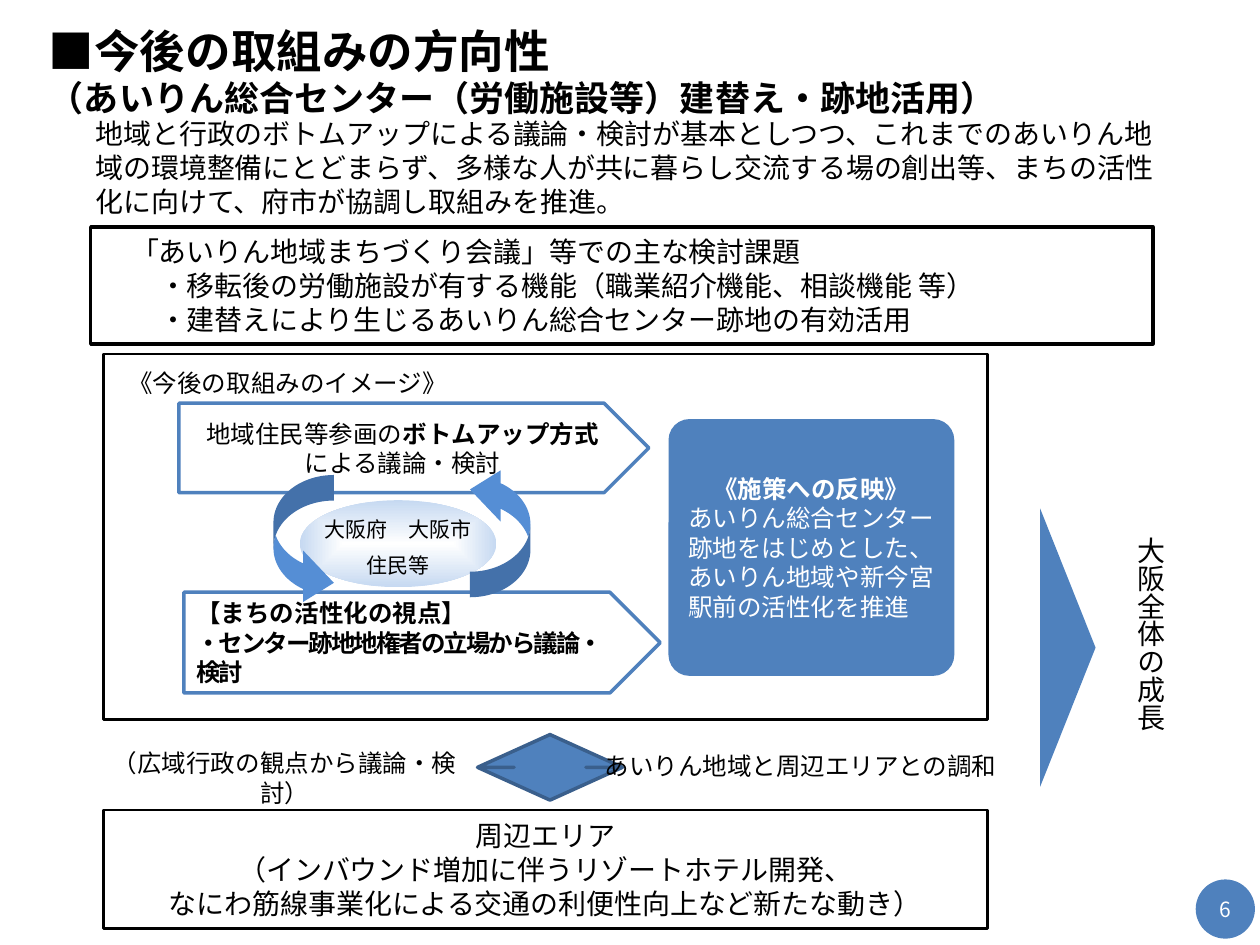
from lxml import etree
from pptx import Presentation
from pptx.dml.color import RGBColor
from pptx.enum.shapes import MSO_SHAPE
from pptx.enum.text import MSO_ANCHOR, PP_ALIGN
from pptx.oxml.ns import qn
from pptx.util import Pt

RECT, PLATE = MSO_SHAPE.RECTANGLE, MSO_SHAPE.PENTAGON
ROUND, OVAL = MSO_SHAPE.ROUNDED_RECTANGLE, MSO_SHAPE.OVAL
WEDGE, CURVE = MSO_SHAPE.ISOSCELES_TRIANGLE, MSO_SHAPE.CURVED_UP_ARROW
TWOWAY = MSO_SHAPE.UP_DOWN_ARROW
LEFT, MID = PP_ALIGN.LEFT, PP_ALIGN.CENTER
TOP, CENTRE = MSO_ANCHOR.TOP, MSO_ANCHOR.MIDDLE

PX = 9144  # 100 px to the inch
FONT = "Noto Sans CJK JP"
HUES = {"black": "000000", "white": "FFFFFF", "blue": "4F81BD",
        "navy": "3A5F8C", "sky": "558ED5", "pale": "C6D9F1"}
RGB = {name: RGBColor.from_string(code) for name, code in HUES.items()}

deck = Presentation()
deck.slide_width, deck.slide_height = 1000 * PX, 750 * PX
slide = deck.slides.add_slide(deck.slide_layouts[6])


def draw(kind, at, fill=None, line=None, width=2, turn=0, adj=()):
    """Add a preset shape, or a text box when kind is None."""
    box = [n * PX for n in at]
    if kind is None:
        return slide.shapes.add_textbox(*box)
    shape = slide.shapes.add_shape(kind, *box)
    shape.shadow.inherit = False
    shape.rotation = turn
    for i, value in enumerate(adj):
        shape.adjustments[i] = value
    if fill:
        shape.fill.solid()
        shape.fill.fore_color.rgb = RGB[fill]
    else:
        shape.fill.background()
    if line:
        shape.line.color.rgb = RGB[line]
        shape.line.width = Pt(width)
    else:
        shape.line.fill.background()
    return shape


def write(shape, size, paras, hue="black", align=LEFT, anchor=TOP, wrap=True):
    """Fill a shape with text; each paragraph is (runs, layout), each run (text, font)."""
    frame = shape.text_frame
    frame.word_wrap, frame.vertical_anchor = wrap, anchor
    for i, (runs, layout) in enumerate(paras):
        para = frame.paragraphs[0] if i == 0 else frame.add_paragraph()
        for key, value in {"alignment": align, **layout}.items():
            setattr(para, key, value)
        for text, font in runs:
            run = para.add_run()
            run.text = text
            style = {"name": FONT, "size": Pt(size), "bold": False, **font}
            for key, value in style.items():
                setattr(run.font, key, value)
            run.font.color.rgb = RGB[hue]
            etree.SubElement(run.font._element, qn("a:ea"), typeface=FONT)
    return frame


BOLD = {"bold": True}

# Heading and lead
tight = {"line_spacing": Pt(23)}
write(draw(None, (29, 25, 945, 75)), 20, [
    ([("■今後の取組みの方向性", {"bold": True, "size": Pt(26)})], tight),
    ([("（あいりん総合センター（労働施設等）建替え・跡地活用）", BOLD)], tight)])
lead = ("地域と行政のボトムアップによる議論・検討が基本としつつ、これまでのあいりん地域の環境整備に"
        "とどまらず、多様な人が共に暮らし交流する場の創出等、まちの活性化に向けて、府市が協調し取組みを推進。")
write(draw(None, (66, 88, 864, 100)), 16, [([(lead, {})], {})])

# Viewpoint and policy
view = draw(PLATE, (146, 470, 378, 80), "white", "blue")
frame = write(view, 14, [
    ([("【まちの活性化の視点】", BOLD)], {}),
    ([("・センター跡地地権者の立場から議論・検討", BOLD)], {})], anchor=CENTRE)
frame.paragraphs[1].runs[0].font._element.set("spc", "-120")

policy = draw(ROUND, (532, 334, 224, 201), "blue", "blue", adj=(0.076,))
write(policy, 14, [
    ([("《施策への反映》", BOLD)], {"alignment": MID}),
    ([("あいりん総合センター跡地をはじめとした、あいりん地域や新今宮駅前の活性化を推進", {})], {})],
    "white", anchor=CENTRE)

# Frame of the scheme, nearby area and labels over the two-way arrow
draw(RECT, (82, 281, 702, 290), None, "black", 1.5)
nearby = ("周辺エリア", "（インバウンド増加に伴うリゾートホテル開発、",
          "なにわ筋線事業化による交通の利便性向上など新たな動き）")
write(draw(RECT, (82, 643, 702, 94), None, "black", 1.5), 16,
      [([(text, {})], {}) for text in nearby], align=MID, anchor=CENTRE)

# This preset lists its head length before its shaft width
draw(TWOWAY, (379, 583, 115, 52), "blue", "navy", adj=(0.32, 0.495))
for at, text in (((464, 591, 343, 37), "あいりん地域と周辺エリアとの調和"),
                 ((62, 589, 328, 37), "（広域行政の観点から議論・検討）")):
    write(draw(None, at), 14, [([(text, {})], {})], align=MID)

# Growth of the whole city
growth = write(draw(None, (889, 416, 42, 188)), 16, [([("大阪全体の成長", {})], {})])
growth._txBody.bodyPr.set("vert", "eaVert")
draw(WEDGE, (737, 492, 221, 44), "blue", turn=90)

# Topics, indented by whole characters
topics = (("「あいりん地域まちづくり会議」等での主な検討課題", 1),
          ("・移転後の労働施設が有する機能（職業紹介機能、相談機能 等）", 2),
          ("・建替えにより生じるあいりん総合センター跡地の有効活用", 2))
frame = write(draw(RECT, (72, 180, 843, 93), None, "black"), 16,
              [([(text, {})], {}) for text, _ in topics], anchor=CENTRE)
for para, (_, depth) in zip(frame.paragraphs, topics):
    para._p.get_or_add_pPr().set("marL", str(Pt(16) * depth))

# Page number
write(draw(OVAL, (949, 698, 47, 47), "blue"), 12, [([("6", {})], {})],
      "white", MID, CENTRE, wrap=False)

# Parties in the middle of the cycle
core = draw(OVAL, (238, 397, 156, 69))
core.fill.gradient()
for stop, place, hue in zip(core.fill.gradient_stops, (0, 1), ("white", "pale")):
    stop.position, stop.color.rgb = place, RGB[hue]
grad = core._element.spPr.find(qn("a:gradFill"))
grad.remove(grad.find(qn("a:lin")))
glow = etree.SubElement(grad, qn("a:path"), {"path": "rect"})
etree.SubElement(glow, qn("a:fillToRect"), dict.fromkeys("ltrb", "50000"))
write(draw(None, (247, 405, 138, 63)), 12, [
    ([("大阪府　大阪市", {})], {}),
    ([("住民等", {})], {"space_before": Pt(6)})], align=MID, wrap=False)

# Bottom-up talks and the cycle arrows
write(draw(None, (92, 287, 289, 34)), 14, [([("《今後の取組みのイメージ》", {})], {})])
write(draw(PLATE, (142, 320, 373, 71), "white", "blue"), 14, [
    ([("地域住民等参画の", {}), ("ボトムアップ方式", BOLD)], {}),
    ([("による議論・検討", {})], {})], align=MID, anchor=CENTRE)
for left, top, turn in ((344, 397, 270), (188, 406, 90)):
    draw(CURVE, (left, top, 106, 48), "sky", turn=turn, adj=(0.423, 0.849, 0.508))

deck.save("out.pptx")
